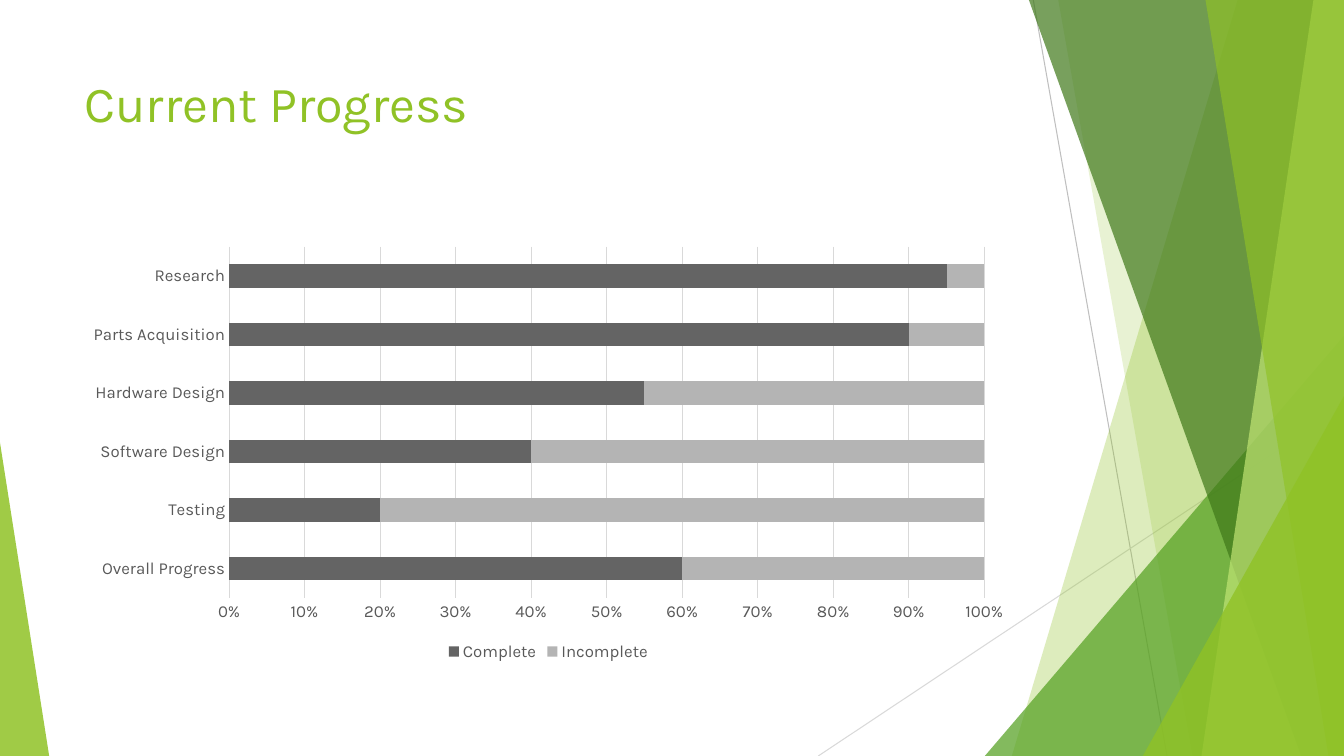
from lxml.etree import SubElement
from pptx import Presentation
from pptx.chart.data import CategoryChartData
from pptx.dml.color import RGBColor
from pptx.enum.chart import XL_CHART_TYPE, XL_LEGEND_POSITION, XL_TICK_MARK
from pptx.enum.shapes import MSO_CONNECTOR, MSO_SHAPE
from pptx.enum.text import MSO_ANCHOR
from pptx.oxml.ns import qn
from pptx.util import Cm, Pt

WIDTH, HEIGHT = 33.87, 19.05
FONT = "Karla"
COLORS = {
    "lime": "90C226",
    "pale lime": "C0E474",
    "green": "54A021",
    "dark green": "3F7819",
    "line": "BFBFBF",
    "light line": "D9D9D9",
    "label": "595959",
    "Complete": "646464",
    "Incomplete": "B4B4B4",
}
PROGRESS = {
    "Overall Progress": 60,
    "Testing": 20,
    "Software Design": 40,
    "Hardware Design": 55,
    "Parts Acquisition": 90,
    "Research": 95,
}


def color(name):
    return RGBColor.from_string(COLORS[name])


def style_facet(shape, color_name, opacity):
    """Fill a shape with a translucent colour, without outline or shadow."""
    shape.shadow.inherit = False
    shape.line.fill.background()
    shape.fill.solid()
    shape.fill.fore_color.rgb = color(color_name)
    color_element = shape.fill._xPr.find(qn("a:solidFill"))[0]
    SubElement(color_element, qn("a:alpha"), val=str(opacity * 1000))


def add_band(slide, top_x, bottom_x, color_name, opacity):
    """Add a full-height band from a slanted left edge to the slide's right edge."""
    builder = slide.shapes.build_freeform(Cm(top_x), 0)
    builder.add_line_segments(
        [(Cm(WIDTH), 0), (Cm(WIDTH), Cm(HEIGHT)), (Cm(bottom_x), Cm(HEIGHT))], close=True
    )
    style_facet(builder.convert_to_shape(), color_name, opacity)


def add_corner(slide, left, right, top, peak, color_name, opacity):
    """Add a triangle on the bottom edge; peak 0 is its left side, 1 its right."""
    shape = slide.shapes.add_shape(
        MSO_SHAPE.ISOSCELES_TRIANGLE, Cm(left), Cm(top), Cm(right - left), Cm(HEIGHT - top)
    )
    shape.adjustments[0] = peak
    style_facet(shape, color_name, opacity)


def add_thin_line(slide, start_x, start_y, end_x, color_name):
    """Add a line that ends on the bottom edge."""
    connector = slide.shapes.add_connector(
        MSO_CONNECTOR.STRAIGHT, Cm(start_x), Cm(start_y), Cm(end_x), Cm(HEIGHT)
    )
    connector.line.color.rgb = color(color_name)
    connector.line.width = Pt(0.75)
    SubElement(connector._element.spPr, qn("a:effectLst"))


def add_facets(slide):
    add_thin_line(slide, 26.04, 0, 29.41, "line")
    add_thin_line(slide, WIDTH, 10.24, 20.62, "light line")
    add_band(slide, 31.19, 25.5, "lime", 30)
    add_band(slide, 26.67, 30.05, "lime", 20)
    add_corner(slide, 24.82, WIDTH, 8.46, 1, "green", 72)
    add_band(slide, 25.93, 32.79, "dark green", 70)
    add_band(slide, 33.1, 30.28, "pale lime", 70)
    add_band(slide, 30.38, 33.48, "lime", 65)
    add_corner(slide, 28.8, WIDTH, 9.98, 1, "lime", 80)
    add_corner(slide, 0, 1.24, 11.15, 0, "lime", 85)


def add_title(slide, left, top, width, height):
    frame = slide.shapes.add_textbox(Cm(left), Cm(top), Cm(width), Cm(height)).text_frame
    frame.word_wrap = True
    frame.vertical_anchor = MSO_ANCHOR.TOP
    run = frame.paragraphs[0].add_run()
    run.text = "Current Progress"
    run.font.name = FONT
    run.font.size = Pt(36)
    run.font.color.rgb = color("lime")


def style_labels(font):
    font.name = FONT
    font.size = Pt(12)
    font.color.rgb = color("label")


def style_line(line):
    line.color.rgb = color("light line")
    line.width = Pt(0.75)


def add_progress_chart(slide, left, top, width, height):
    data = CategoryChartData()
    data.categories = list(PROGRESS)
    data.add_series("Complete", PROGRESS.values())
    data.add_series("Incomplete", [100 - value for value in PROGRESS.values()])
    chart = slide.shapes.add_chart(
        XL_CHART_TYPE.BAR_STACKED_100, Cm(left), Cm(top), Cm(width), Cm(height), data
    ).chart
    chart.has_title = False
    style_labels(chart.font)

    plot = chart.plots[0]
    plot.gap_width = 150
    plot.overlap = 100
    plot.vary_by_categories = False
    for series in plot.series:
        series.format.fill.solid()
        series.format.fill.fore_color.rgb = color(series.name)

    for axis in (chart.category_axis, chart.value_axis):
        axis.major_tick_mark = XL_TICK_MARK.NONE
        axis.minor_tick_mark = XL_TICK_MARK.NONE
        style_labels(axis.tick_labels.font)
    style_line(chart.category_axis.format.line)

    value_axis = chart.value_axis
    value_axis.format.line.fill.background()
    value_axis.has_major_gridlines = True
    style_line(value_axis.major_gridlines.format.line)
    value_axis.tick_labels.number_format = "0%"
    value_axis.tick_labels.number_format_is_linked = False

    chart.has_legend = True
    chart.legend.position = XL_LEGEND_POSITION.BOTTOM
    chart.legend.include_in_layout = False
    style_labels(chart.legend.font)


def main():
    presentation = Presentation()
    presentation.slide_width = Cm(WIDTH)
    presentation.slide_height = Cm(HEIGHT)
    slide = presentation.slides.add_slide(presentation.slide_layouts[6])
    add_facets(slide)
    add_title(slide, 1.88, 1.7, 23.88, 3.66)
    add_progress_chart(slide, 1.88, 6, 23.88, 10.77)
    presentation.save("out.pptx")


if __name__ == "__main__":
    main()
